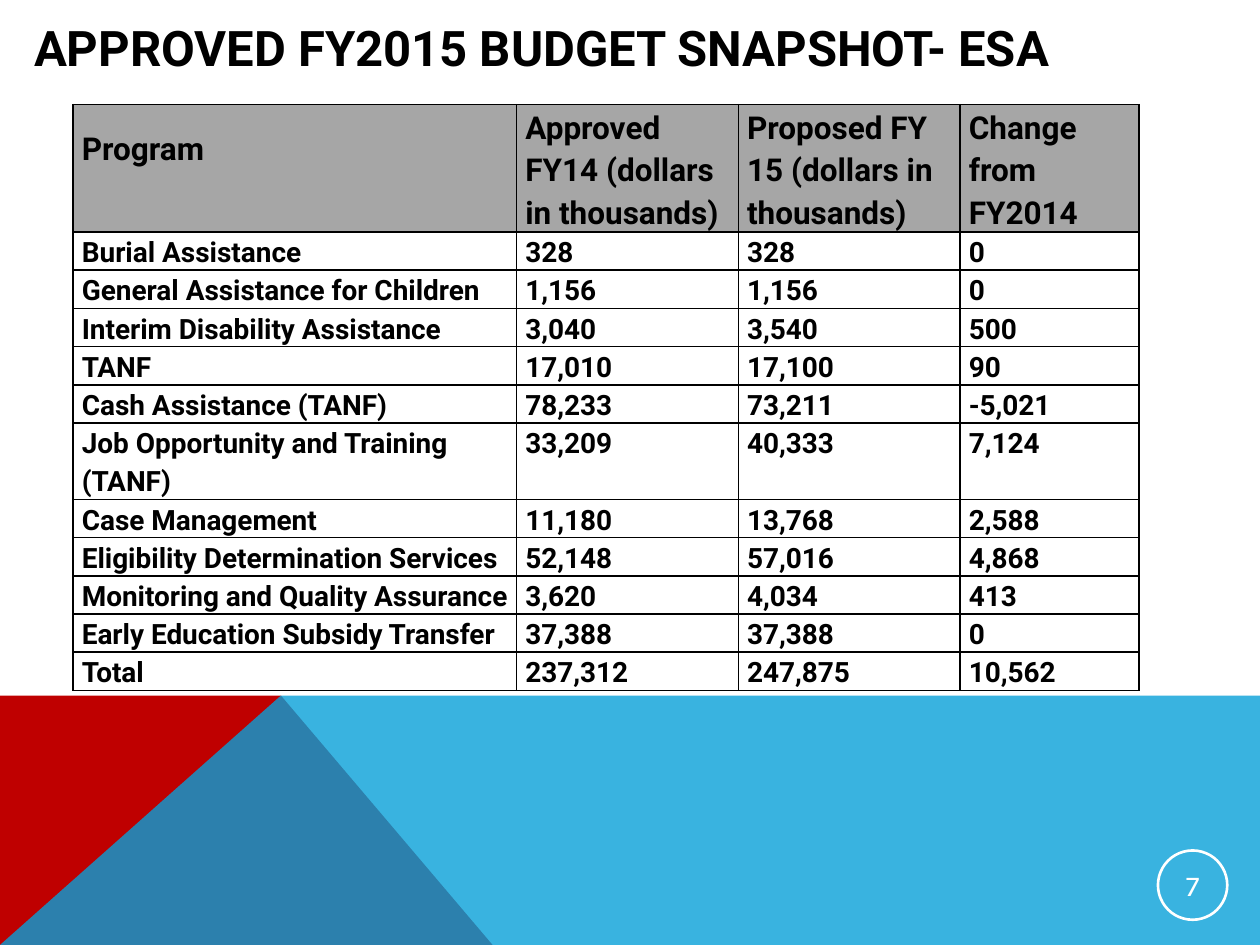
from lxml.etree import SubElement
from pptx import Presentation
from pptx.dml.color import RGBColor
from pptx.enum.shapes import MSO_SHAPE
from pptx.enum.text import MSO_ANCHOR, PP_ALIGN
from pptx.oxml.ns import qn
from pptx.util import Inches, Pt

HEAD = ("Program", "Approved FY14 (dollars in thousands)",
        "Proposed FY 15 (dollars in thousands)", "Change from FY2014")
ROWS = (
    ("Burial Assistance", "328", "328", "0"),
    ("General Assistance for Children", "1,156", "1,156", "0"),
    ("Interim Disability Assistance", "3,040", "3,540", "500"),
    ("TANF", "17,010", "17,100", "90"),
    ("Cash Assistance (TANF)", "78,233", "73,211", "-5,021"),
    ("Job Opportunity and Training (TANF)", "33,209", "40,333", "7,124"),
    ("Case Management", "11,180", "13,768", "2,588"),
    ("Eligibility Determination Services", "52,148", "57,016", "4,868"),
    ("Monitoring and Quality Assurance", "3,620", "4,034", "413"),
    ("Early Education Subsidy Transfer", "37,388", "37,388", "0"),
    ("Total", "237,312", "247,875", "10,562"),
)
WIDTHS = (3.52, 1.76, 1.76, 1.42)
FULL, HIGH = 4.65, 1.01
TALL_ROW = 6
LOW = (FULL - HIGH) / (len(ROWS) + 1)


def paint(fill, color):
    """Make a fill solid in a hex colour."""
    fill.solid()
    fill.fore_color.rgb = RGBColor.from_string(color)


def style(para, size, face, color, bold=False):
    """Format the runs of a paragraph."""
    for run in para.runs:
        font = run.font
        font.size, font.name, font.bold = Pt(size), face, bold
        font.color.rgb = RGBColor.from_string(color)


def add_area(slide, points, color, alpha=100):
    """Draw a filled polygon without an outline."""
    spots = [(Inches(x), Inches(y)) for x, y in points]
    build = slide.shapes.build_freeform(*spots[0])
    build.add_line_segments(spots[1:], close=True)
    area = build.convert_to_shape()
    area.shadow.inherit = False
    area.line.fill.background()
    paint(area.fill, color)
    if alpha < 100:
        tone = area.fill._xPr.find(".//" + qn("a:srgbClr"))
        SubElement(tone, qn("a:alpha"), val=str(alpha * 1000))


def set_title(slide, text):
    """Place and format the title."""
    title = slide.shapes.title
    title.left, title.top = Inches(0.17), Inches(0.08)
    title.width, title.height = Inches(8.96), Inches(0.58)
    frame = title.text_frame
    frame.text = text
    frame.vertical_anchor = MSO_ANCHOR.MIDDLE
    frame.paragraphs[0].alignment = PP_ALIGN.LEFT
    style(frame.paragraphs[0], 28, "Roboto", "000000", True)


def add_badge(slide, text):
    """Draw the ringed page number."""
    ring = slide.shapes.add_shape(MSO_SHAPE.OVAL, Inches(9.19), Inches(6.75),
                                  Inches(0.55), Inches(0.55))
    ring.shadow.inherit = False
    ring.fill.background()
    paint(ring.line.fill, "FFFFFF")
    ring.line.width = Pt(1.5)
    frame = ring.text_frame
    frame.margin_left = frame.margin_right = Inches(0.01)
    frame.margin_top = frame.margin_bottom = Inches(0.01)
    frame.vertical_anchor = MSO_ANCHOR.MIDDLE
    frame.text = text
    frame.paragraphs[0].alignment = PP_ALIGN.CENTER
    style(frame.paragraphs[0], 16.5, "Karla", "FFFFFF")


def add_edges(cell):
    """Give a cell thin black borders."""
    props = cell._tc.get_or_add_tcPr()
    for side in ("lnL", "lnR", "lnT", "lnB"):
        edge = SubElement(props, qn("a:" + side), w=str(Pt(1)))
        fill = SubElement(edge, qn("a:solidFill"))
        SubElement(fill, qn("a:srgbClr"), val="000000")


def fill_cell(cell, text, head):
    """Write and format one table cell."""
    add_edges(cell)
    cell.margin_left = Inches(0.07)
    cell.margin_right = Inches(0.07 if head else 0.03)
    cell.margin_top = cell.margin_bottom = 0
    cell.vertical_anchor = MSO_ANCHOR.TOP
    if head:
        paint(cell.fill, "A6A6A6")
    else:
        cell.fill.background()
    cell.text_frame.text = text
    para = cell.text_frame.paragraphs[0]
    para.line_spacing = 1.15
    style(para, 18 if head else 16, "Roboto", "000000", True)


def add_budget(slide):
    """Build the budget table."""
    data = (HEAD,) + ROWS
    table = slide.shapes.add_table(
        len(data), len(HEAD), Inches(0.58), Inches(0.83),
        Inches(sum(WIDTHS)), Inches(FULL)).table
    for col, width in zip(table.columns, WIDTHS):
        col.width = Inches(width)
    for r, texts in enumerate(data):
        size = {0: HIGH, TALL_ROW: 2 * LOW}.get(r, LOW)
        table.rows[r].height = Inches(size)
        for c, text in enumerate(texts):
            fill_cell(table.cell(r, c), text, r == 0)
    table.cell(0, 0).margin_top = Inches(0.17)


def main():
    """Build and save the slide."""
    deck = Presentation()
    deck.slide_width, deck.slide_height = Inches(10), Inches(7.5)
    slide = deck.slides.add_slide(deck.slide_layouts[5])
    add_area(slide, [(0, 7.5), (0, 5.52), (2.23, 5.52), (3.91, 7.5)], "BF0000")
    add_area(slide, [(0, 7.5), (2.23, 5.52), (10, 5.52), (10, 7.5)],
             "08A1D9", 80)
    set_title(slide, "APPROVED FY2015 BUDGET SNAPSHOT- ESA")
    add_badge(slide, "7")
    add_budget(slide)
    deck.save("out.pptx")


if __name__ == "__main__":
    main()
